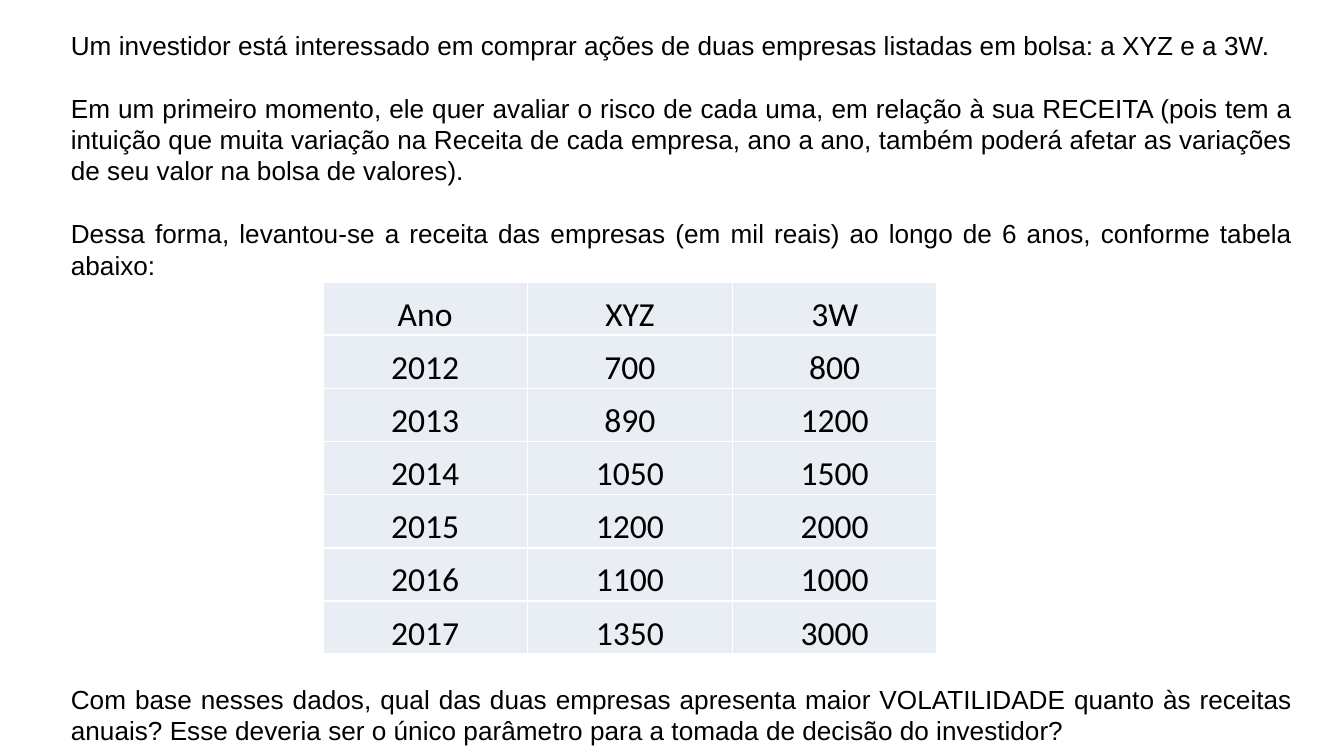
from lxml import etree
from pptx import Presentation
from pptx import util as u
from pptx.dml.color import RGBColor
from pptx.enum import text
from pptx.oxml.ns import qn

COLORS = {"text": "000000", "cell": "E9EDF4", "border": "FFFFFF"}


def style_runs(p, font, size):
    for r in p.runs:
        r.font.name = font
        r.font.size = u.Pt(size)
        r.font.color.rgb = RGBColor.from_string(COLORS["text"])


def add_borders(cell):
    tc_pr = cell._tc.get_or_add_tcPr()
    for i, side in enumerate(("lnL", "lnR", "lnT", "lnB")):
        ln = etree.Element(qn(f"a:{side}"), w=str(u.Pt(1)))
        fill = etree.SubElement(ln, qn("a:solidFill"))
        etree.SubElement(fill, qn("a:srgbClr"), val=COLORS["border"])
        tc_pr.insert(i, ln)


prs = Presentation()
prs.slide_width, prs.slide_height = u.Cm(25.4), u.Cm(14.29)
s = prs.slides.add_slide(prs.slide_layouts[6])

# Problem statement: text and space after in points; the last gap holds the table
paragraphs = [
    ("Um investidor está interessado em comprar ações de duas empresas "
     "listadas em bolsa: a XYZ e a 3W.", 16.8),
    ("Em um primeiro momento, ele quer avaliar o risco de cada uma, em relação "
     "à sua RECEITA (pois tem a intuição que muita variação na Receita de cada "
     "empresa, ano a ano, também poderá afetar as variações de seu valor na "
     "bolsa de valores).", 16.8),
    ("Dessa forma, levantou-se a receita das empresas (em mil reais) ao longo "
     "de 6 anos, conforme tabela abaixo:", 216),
    ("Com base nesses dados, qual das duas empresas apresenta maior "
     "VOLATILIDADE quanto às receitas anuais? Esse deveria ser o único "
     "parâmetro para a tomada de decisão do investidor?", 0),
]
sp = s.shapes.add_textbox(u.Cm(1.09), u.Cm(0.36), u.Cm(23.6), u.Cm(13.94))
tf = sp.text_frame
tf.word_wrap = True
tf.vertical_anchor = text.MSO_ANCHOR.MIDDLE
for i, (words, gap) in enumerate(paragraphs):
    p = tf.add_paragraph() if i else tf.paragraphs[0]
    p.text = words
    p.alignment = text.PP_ALIGN.JUSTIFY
    p.line_spacing = u.Pt(16.8)
    p.space_after = u.Pt(gap)
    style_runs(p, "Arial", 14)

# Revenue table
rows = [
    ("Ano", "XYZ", "3W"),
    (2012, 700, 800),
    (2013, 890, 1200),
    (2014, 1050, 1500),
    (2015, 1200, 2000),
    (2016, 1100, 1000),
    (2017, 1350, 3000),
]
table = s.shapes.add_table(len(rows), len(rows[0]), u.Cm(6.1), u.Cm(5.33),
                           u.Cm(11.61), u.Cm(7.04)).table
table.first_row = table.horz_banding = False
for i, row in enumerate(rows):
    for j, value in enumerate(row):
        cell = table.cell(i, j)
        cell.fill.solid()
        cell.fill.fore_color.rgb = RGBColor.from_string(COLORS["cell"])
        cell.margin_left = cell.margin_right = u.Cm(0.13)
        cell.margin_top = cell.margin_bottom = 0
        cell.vertical_anchor = text.MSO_ANCHOR.BOTTOM
        add_borders(cell)
        p = cell.text_frame.paragraphs[0]
        p.text = str(value)
        p.alignment = text.PP_ALIGN.CENTER
        style_runs(p, "Calibri", 18)

prs.save("out.pptx")
